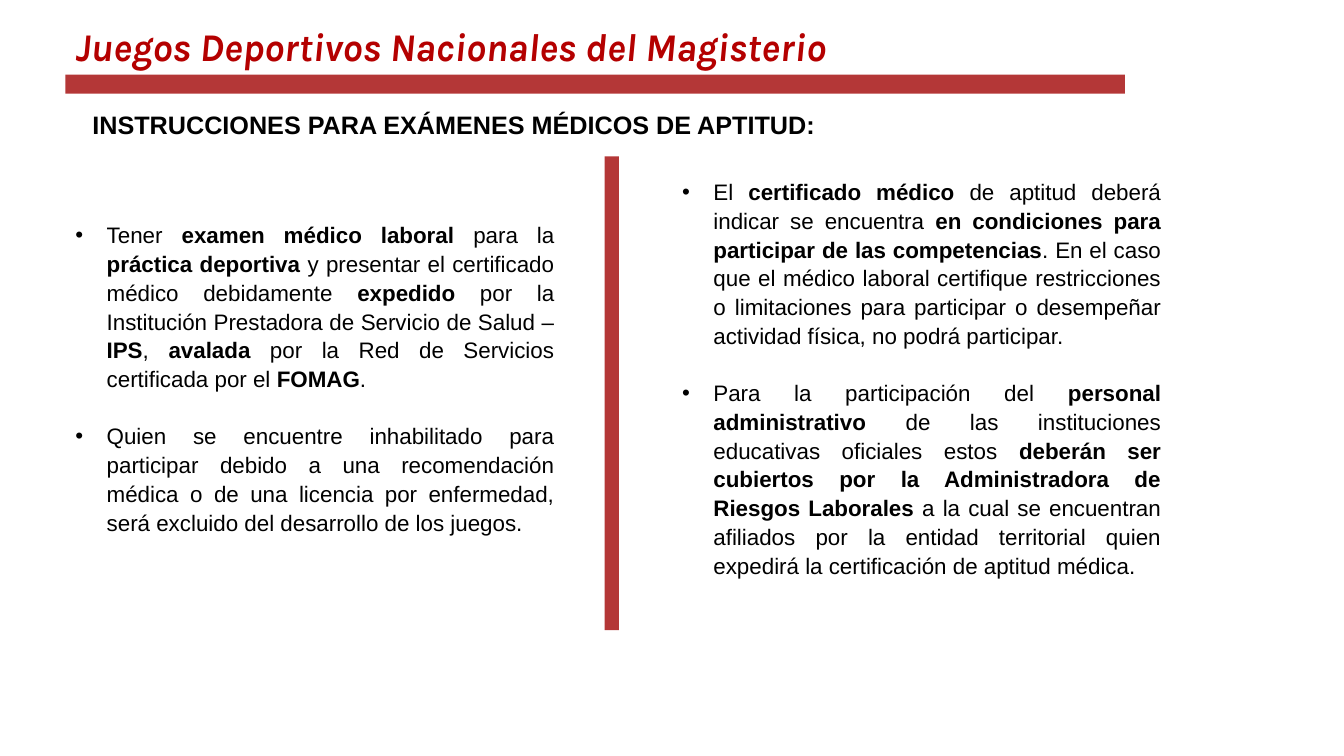
from pptx import Presentation
from pptx.dml.color import RGBColor
from pptx.enum.shapes import MSO_SHAPE as Shape
from pptx.enum.text import MSO_AUTO_SIZE as AutoSize, PP_ALIGN as Align
from pptx.oxml.ns import qn
from pptx.util import Cm, Pt
from lxml.etree import SubElement

TITLE_RED = RGBColor(0xB4, 0x00, 0x00)
BAR_RED = RGBColor(0xB4, 0x37, 0x37)
BLACK = RGBColor(0x00, 0x00, 0x00)

COLUMN_WIDTH = 12.57
BULLET_INDENT = 0.79

EXAM_RULES = [
    [("Tener ", False), ("examen médico laboral ", True), ("para la ", False),
     ("práctica deportiva", True),
     (" y presentar el certificado médico debidamente ", False), ("expedido", True),
     (" por la Institución Prestadora de Servicio de Salud – ", False), ("IPS", True),
     (", ", False), ("avalada", True),
     (" por la Red de Servicios certificada por el ", False), ("FOMAG", True), (".", False)],
    [("Quien se encuentre inhabilitado para participar debido a una recomendación médica "
      "o de una licencia por enfermedad, será excluido del desarrollo de los juegos.", False)],
]
CERTIFICATE_RULES = [
    [("El ", False), ("certificado médico ", True),
     ("de aptitud deberá indicar se encuentra ", False),
     ("en condiciones para participar de las competencias", True),
     (". En el caso que el médico laboral certifique restricciones o limitaciones para "
      "participar o desempeñar actividad física, no podrá participar.", False)],
    [("Para la participación del ", False), ("personal administrativo", True),
     (" de las instituciones educativas oficiales estos ", False),
     ("deberán ser cubiertos por la Administradora de Riesgos Laborales", True),
     (" a la cual se encuentran afiliados por la entidad territorial quien expedirá "
      "la certificación de aptitud médica.", False)],
]


def add_bar(slide, left, top, width, height):
    """Draw a plain red bar, measured in centimetres."""
    bar = slide.shapes.add_shape(Shape.RECTANGLE, Cm(left), Cm(top), Cm(width), Cm(height))
    bar.shadow.inherit = False
    bar.fill.solid()
    bar.fill.fore_color.rgb = BAR_RED
    bar.line.fill.background()


def add_frame(slide, left, top, width, height):
    """Add a wrapping text box and return its text frame."""
    box = slide.shapes.add_textbox(Cm(left), Cm(top), Cm(width), Cm(height))
    frame = box.text_frame
    frame.word_wrap = True
    frame.auto_size = AutoSize.SHAPE_TO_FIT_TEXT
    return frame


def add_run(paragraph, words, size, bold, typeface="Arial", color=BLACK, italic=False):
    """Append one formatted run to a paragraph."""
    run = paragraph.add_run()
    run.text = words
    run.font.name = typeface
    run.font.size = Pt(size)
    run.font.bold = bold
    run.font.italic = italic
    run.font.color.rgb = color


def add_bullet(paragraph):
    """Give a paragraph a hanging round bullet."""
    properties = paragraph._p.get_or_add_pPr()
    properties.set("marL", str(Cm(BULLET_INDENT)))
    properties.set("indent", str(-Cm(BULLET_INDENT)))
    SubElement(properties, qn("a:buFont"), typeface="Arial")
    SubElement(properties, qn("a:buChar"), char="•")


def add_rules(slide, left, top, height, rules):
    """Add a justified column of bulleted rules."""
    frame = add_frame(slide, left, top, COLUMN_WIDTH, height)
    for index, rule in enumerate(rules):
        paragraph = frame.add_paragraph() if index else frame.paragraphs[0]
        add_bullet(paragraph)
        paragraph.alignment = Align.JUSTIFY
        paragraph.line_spacing = 1.07
        if index:
            paragraph.space_before = Pt(20.5)
        for words, bold in rule:
            add_run(paragraph, words, 16, bold)


def main():
    """Build and save the slide."""
    deck = Presentation()
    deck.slide_width, deck.slide_height = Cm(33.87), Cm(19.05)
    slide = deck.slides.add_slide(deck.slide_layouts[6])

    title = add_frame(slide, 1.65, 0.43, 29.36, 1.45)
    add_run(title.paragraphs[0], "Juegos Deportivos Nacionales del Magisterio", 28, True,
            "Karla", TITLE_RED, italic=True)
    add_bar(slide, 1.65, 1.88, 26.7, 0.48)

    heading = add_frame(slide, 2.08, 2.62, 24.28, 1.02)
    add_run(heading.paragraphs[0], "INSTRUCCIONES PARA EXÁMENES MÉDICOS DE APTITUD:", 18, True)

    add_rules(slide, 1.65, 5.41, 8.26, EXAM_RULES)
    add_rules(slide, 16.94, 4.32, 11.91, CERTIFICATE_RULES)
    add_bar(slide, 15.24, 3.94, 0.36, 11.94)

    deck.save("out.pptx")


if __name__ == "__main__":
    main()
